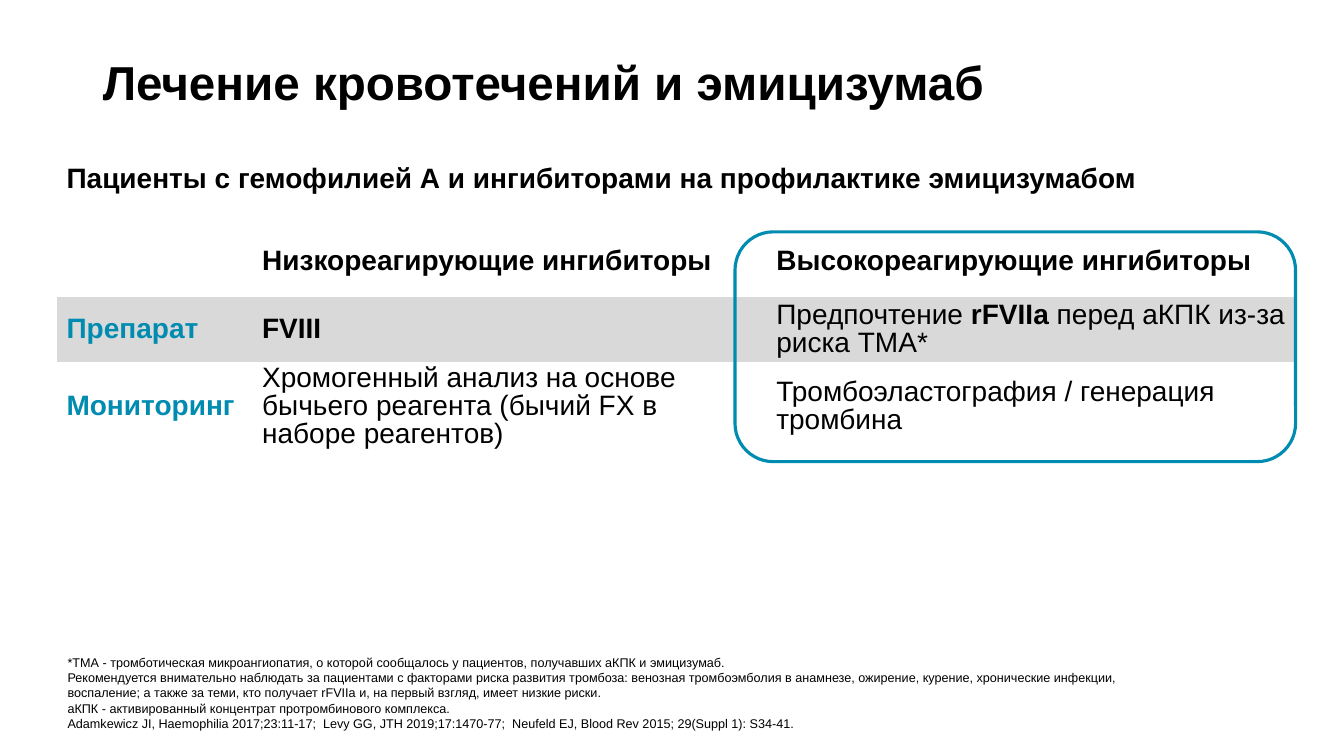
from pptx import Presentation
from pptx.dml.color import RGBColor
from pptx.enum.shapes import MSO_SHAPE
from pptx.enum.text import MSO_ANCHOR, MSO_AUTO_SIZE, PP_ALIGN
from pptx.oxml.ns import qn
from pptx.util import Inches, Pt
from lxml.etree import SubElement

BLACK = RGBColor(0x00, 0x00, 0x00)
WHITE = RGBColor(0xFF, 0xFF, 0xFF)
GREY = RGBColor(0xD9, 0xD9, 0xD9)
TEAL = RGBColor(0x00, 0x8B, 0xB0)
PLAIN_TABLE_STYLE = "{2D5ABB26-0587-4C30-8999-92F81FD0307C}"

HEADING = "Лечение кровотечений и эмицизумаб"
PATIENTS = "Пациенты с гемофилией А и ингибиторами на профилактике эмицизумабом"
TREATMENT_ROWS = [
    [[(PATIENTS, True, BLACK)], [], []],
    [[], [("Низкореагирующие ингибиторы", True, BLACK)],
     [("Высокореагирующие ингибиторы", True, BLACK)]],
    [[("Препарат", True, TEAL)], [("FVIII", True, BLACK)],
     [("Предпочтение ", False, BLACK), ("rFVIIa", True, BLACK),
      (" перед аКПК из-за риска ТМА*", False, BLACK)]],
    [[("Мониторинг", True, TEAL)],
     [("Хромогенный анализ на основе бычьего реагента (бычий FX в наборе реагентов)",
       False, BLACK)],
     [("Тромбоэластография / генерация тромбина", False, BLACK)]],
]
FOOTNOTES = [
    "*ТМА - тромботическая микроангиопатия, о которой сообщалось у пациентов, "
    "получавших аКПК и эмицизумаб.",
    "Рекомендуется внимательно наблюдать за пациентами с факторами риска развития тромбоза: "
    "венозная тромбоэмболия в анамнезе, ожирение, курение, хронические инфекции, воспаление; "
    "а также за теми, кто получает rFVIIa и, на первый взгляд, имеет низкие риски.",
    "аКПК - активированный концентрат протромбинового комплекса.",
    "Adamkewicz JI, Haemophilia 2017;23:11-17;  Levy GG, JTH 2019;17:1470-77;  "
    "Neufeld EJ, Blood Rev 2015; 29(Suppl 1): S34-41.",
]


def apply(target, **values):
    for attribute, value in values.items():
        setattr(target, attribute, value)


class SlideBuilder:
    font_name = "Arial"

    def __init__(self, slide):
        self.slide = slide

    def font(self, font, size, bold=False, color=BLACK):
        apply(font, name=self.font_name, size=Pt(size), bold=bold)
        font.color.rgb = color

    def place(self, shape, box):
        apply(shape, **dict(zip(("left", "top", "width", "height"), map(Inches, box))))

    def title(self, text, box):
        title = self.slide.shapes.title
        self.place(title, box)
        title.text = text
        apply(title.text_frame, vertical_anchor=MSO_ANCHOR.MIDDLE,
              auto_size=MSO_AUTO_SIZE.NONE)
        heading = title.text_frame.paragraphs[0]
        apply(heading, alignment=PP_ALIGN.LEFT, line_spacing=0.9)
        self.font(heading.runs[0].font, 34, True)

    def footnotes(self, notes, box):
        body = self.slide.placeholders[1]
        self.place(body, box)
        body.text = "\n".join(notes)
        apply(body.text_frame, vertical_anchor=MSO_ANCHOR.BOTTOM,
              auto_size=MSO_AUTO_SIZE.NONE, margin_bottom=0)
        for note in body.text_frame.paragraphs:
            properties = note._p.get_or_add_pPr()
            properties.set("marL", "0")
            properties.set("indent", "0")
            SubElement(properties, qn("a:buNone"))
            note.space_before = Pt(0)
            self.font(note.runs[0].font, 9)

    def cell(self, cell, runs, fill):
        cell.fill.solid()
        cell.fill.fore_color.rgb = fill
        apply(cell, vertical_anchor=MSO_ANCHOR.MIDDLE,
              margin_left=Inches(0.09), margin_right=Inches(0.09),
              margin_top=Inches(0.03), margin_bottom=Inches(0.03))
        entry = cell.text_frame.paragraphs[0]
        entry.line_spacing = 0.9
        for text, bold, color in runs:
            run = entry.add_run()
            run.text = text
            self.font(run.font, 20, bold, color)

    def table(self, rows, box, widths, heights, fills):
        table = self.slide.shapes.add_table(
            len(rows), len(widths), *map(Inches, box)).table
        apply(table, first_row=False, horz_banding=False)
        table._tbl.tblPr.find(qn("a:tableStyleId")).text = PLAIN_TABLE_STYLE
        for column, width in zip(table.columns, widths):
            column.width = Inches(width)
        for r, (row, height, fill) in enumerate(zip(rows, heights, fills)):
            table.rows[r].height = Inches(height)
            for c, runs in enumerate(row):
                self.cell(table.cell(r, c), runs, fill)
        caption = table.cell(0, 0)
        caption.merge(table.cell(0, len(widths) - 1))
        apply(caption, vertical_anchor=MSO_ANCHOR.BOTTOM,
              margin_top=0, margin_bottom=Inches(0.32))

    def frame(self, box, color):
        frame = self.slide.shapes.add_shape(
            MSO_SHAPE.ROUNDED_RECTANGLE, *map(Inches, box))
        frame.shadow.inherit = False
        frame.fill.background()
        frame.line.color.rgb = color
        frame.line.width = Pt(2.25)


def main():
    presentation = Presentation()
    apply(presentation, slide_width=Inches(13.33), slide_height=Inches(7.5))
    builder = SlideBuilder(presentation.slides.add_slide(presentation.slide_layouts[1]))
    builder.title(HEADING, (0.92, 0.25, 11.5, 1.19))
    builder.footnotes(FOOTNOTES, (0.57, 6.32, 10.95, 0.93))
    builder.table(TREATMENT_ROWS, (0.57, 1.4, 12.27, 3.07), (1.94, 5.1, 5.23),
                  (0.85, 0.7, 0.64, 0.88), (WHITE, WHITE, GREY, WHITE))
    builder.frame((7.29, 2.3, 5.56, 2.28), TEAL)
    presentation.save("out.pptx")


if __name__ == "__main__":
    main()
